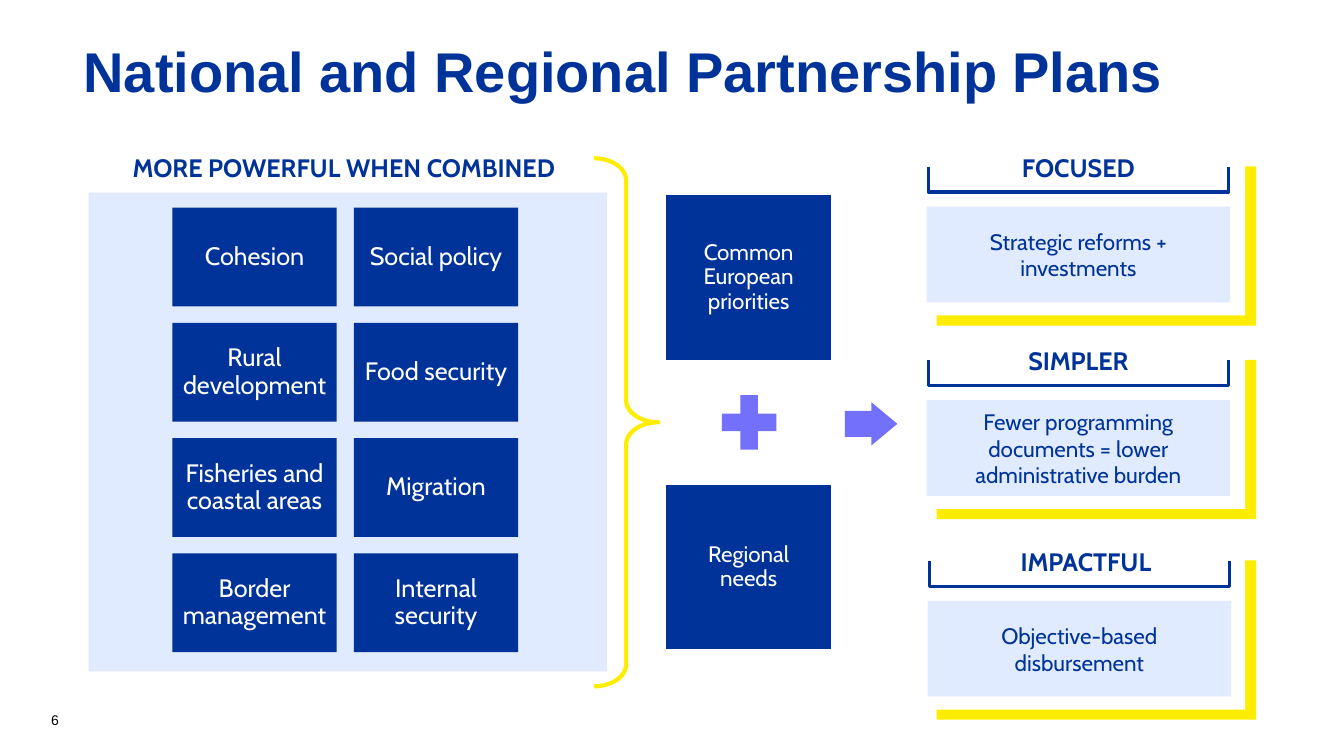
"""Build the National and Regional Partnership Plans slide."""
import pptx
import pptx.dml.color
import pptx.enum.shapes
import pptx.enum.text
import pptx.util

Inches = pptx.util.Inches
RGBColor = pptx.dml.color.RGBColor
Shape = pptx.enum.shapes.MSO_SHAPE
Align = pptx.enum.text.PP_ALIGN
Anchor = pptx.enum.text.MSO_ANCHOR

NAVY = RGBColor(0x00, 0x33, 0x99)
PALE = RGBColor(0xE1, 0xEB, 0xFF)
YELLOW = RGBColor(0xFF, 0xED, 0x00)
VIOLET = RGBColor(0x73, 0x71, 0xFC)
WHITE = RGBColor(0xFF, 0xFF, 0xFF)
BLACK = RGBColor(0x00, 0x00, 0x00)

TITLE = "National and Regional Partnership Plans"
POLICY_HEADING = "MORE POWERFUL WHEN COMBINED"
POLICIES = [
    ("Cohesion", "Social policy"),
    ("Rural development", "Food security"),
    ("Fisheries and coastal areas", "Migration"),
    ("Border management", "Internal security"),
]
NEEDS = [("Common European priorities", 1.93), ("Regional needs", 4.8)]
BENEFITS = [
    ("FOCUSED", "Strategic reforms + investments", 1.43, 9.04, 9.19),
    ("SIMPLER", "Fewer programming documents = lower administrative burden", 3.35, 9.04, 9.19),
    ("IMPACTFUL", "Objective-based disbursement", 5.34, 9.19, 9.2),
]
BENEFIT_RIGHT = 12.35
PAGE_NUMBER = "6"

TITLE_FONT = {"name": "Arial", "size": 40, "bold": True, "color": NAVY}
HEADING_FONT = {"name": "Cabin", "size": 18, "bold": True, "color": NAVY}
TILE_FONT = {"name": "Cabin", "size": 18, "bold": False, "color": WHITE}
NEED_FONT = {"name": "Cabin", "size": 16, "bold": False, "color": WHITE}
DETAIL_FONT = {"name": "Cabin", "size": 16, "bold": False, "color": NAVY}
NUMBER_FONT = {"name": "Arial", "size": 10, "bold": False, "color": BLACK}


def add_figure(page, kind, place, fill=None, line=None, width=1, adjust=()):
    figure = page.shapes.add_shape(kind, *map(Inches, place))
    figure.shadow.inherit = False
    if fill is None:
        figure.fill.background()
    else:
        figure.fill.solid()
        figure.fill.fore_color.rgb = fill
    if line is None:
        figure.line.fill.background()
    else:
        figure.line.color.rgb = line
        figure.line.width = pptx.util.Pt(width)
    for index, value in enumerate(adjust):
        figure.adjustments[index] = value
    return figure


def write(box, text, font, align=Align.CENTER, anchor=Anchor.MIDDLE,
          insets=(0.1, 0.05, 0.1, 0.05), spacing=1.0):
    frame = box.text_frame
    frame.word_wrap = True
    frame.vertical_anchor = anchor
    for side, inset in zip(("left", "top", "right", "bottom"), insets):
        setattr(frame, f"margin_{side}", Inches(inset))
    para = frame.paragraphs[0]
    para.alignment = align
    para.line_spacing = spacing
    span = para.add_run()
    span.text = text
    formats = {"name": font["name"], "size": pptx.util.Pt(font["size"]), "bold": font["bold"]}
    for key, value in formats.items():
        setattr(span.font, key, value)
    span.font.color.rgb = font["color"]


def add_label(page, place, text, font, **layout):
    write(page.shapes.add_textbox(*map(Inches, place)), text, font, **layout)


def add_policies(page):
    add_figure(page, Shape.RECTANGLE, (0.88, 1.91, 5.14, 4.75), PALE)
    add_label(page, (0.84, 1.46, 5.14, 0.4), POLICY_HEADING, HEADING_FONT, anchor=Anchor.TOP)
    for row, names in enumerate(POLICIES):
        for column, name in enumerate(names):
            place = (1.71 + 1.8 * column, 2.06 + 1.143 * row, 1.63, 0.98)
            tile = add_figure(page, Shape.RECTANGLE, place, NAVY)
            write(tile, name, TILE_FONT, insets=(0.07,) * 4, spacing=0.9)


def add_needs(page):
    for name, top in NEEDS:
        square = add_figure(page, Shape.RECTANGLE, (6.6, top, 1.65, 1.65), NAVY, WHITE)
        write(square, name, NEED_FONT, insets=(0.26,) * 4, spacing=0.9)
    add_figure(page, Shape.CROSS, (7.16, 3.92, 0.54, 0.54), VIOLET, adjust=(0.34,))
    add_figure(page, Shape.RIGHT_ARROW, (8.38, 3.99, 0.52, 0.43), VIOLET, adjust=(0.6, 0.6))
    add_figure(page, Shape.RIGHT_BRACE, (5.89, 1.57, 0.64, 5.24), None, YELLOW, 3, (0.344, 0.5))


def add_benefit(page, heading, detail, top, left, panel_left):
    add_figure(page, Shape.RECTANGLE, (9.29, top + 0.22, 3.17, 1.58), YELLOW)
    card = add_figure(page, Shape.RECTANGLE, (left, top, BENEFIT_RIGHT - left, 1.7), WHITE)
    write(card, heading, HEADING_FONT, anchor=Anchor.TOP, insets=(0.1, 0.08, 0.1, 0.05))
    bracket = add_figure(page, Shape.LEFT_BRACKET, (panel_left + 1.38, top - 1.14, 0.25, 2.98),
                         None, NAVY, 2.25, (0,))
    bracket.rotation = 270
    panel = add_figure(page, Shape.RECTANGLE, (panel_left, top + 0.62, 3.01, 0.95), PALE)
    write(panel, detail, DETAIL_FONT, insets=(0.1, 0, 0.1, 0))


def main():
    deck = pptx.Presentation()
    deck.slide_width, deck.slide_height = Inches(13.33), Inches(7.5)
    page = deck.slides.add_slide(deck.slide_layouts[6])
    add_label(page, (0.73, 0.29, 11.93, 0.89), TITLE, TITLE_FONT, align=Align.LEFT, spacing=0.9)
    add_policies(page)
    add_needs(page)
    for benefit in BENEFITS:
        add_benefit(page, *benefit)
    add_label(page, (0.41, 6.87, 3, 0.4), PAGE_NUMBER, NUMBER_FONT,
              align=Align.LEFT, anchor=Anchor.BOTTOM)
    deck.save("out.pptx")


if __name__ == "__main__":
    main()
